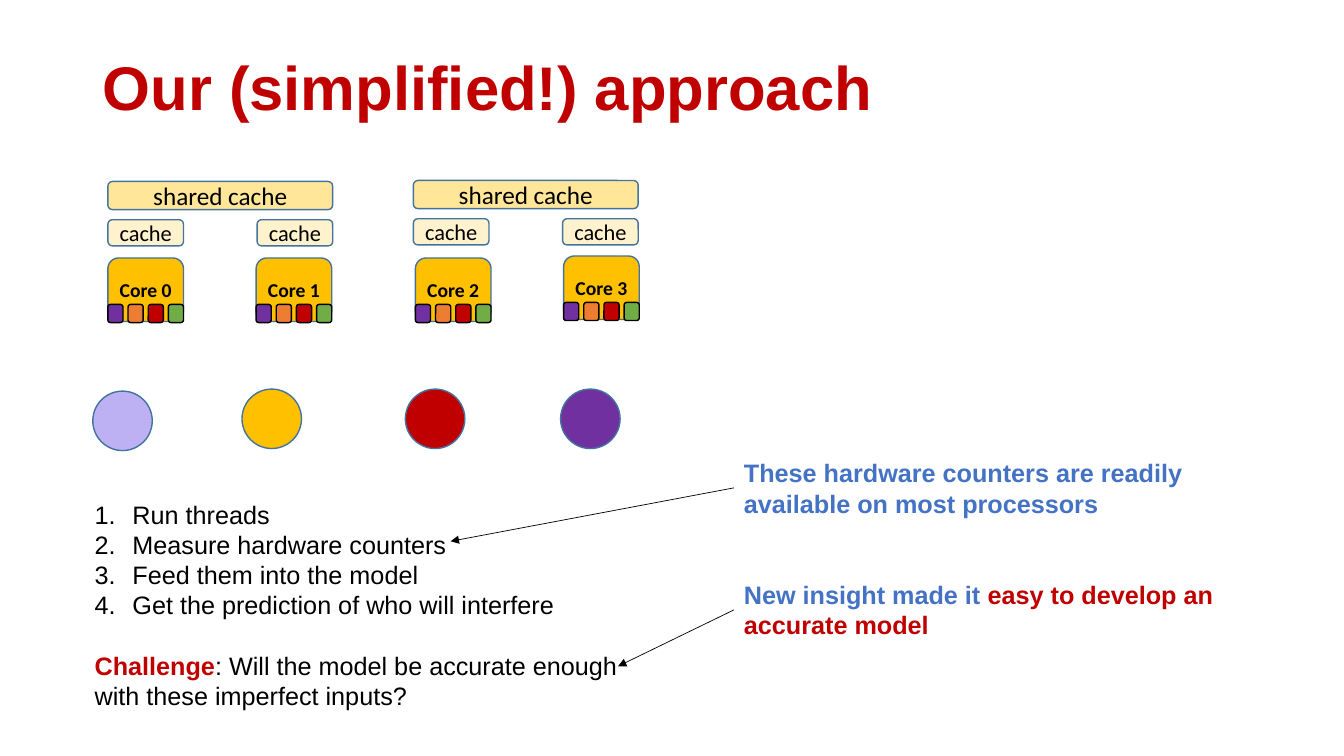
from dataclasses import dataclass
from lxml.etree import SubElement
from pptx import Presentation
from pptx.dml.color import RGBColor
from pptx.enum.shapes import MSO_CONNECTOR as Conn, MSO_SHAPE as Shape
from pptx.enum.text import MSO_ANCHOR as Anchor, MSO_AUTO_SIZE as Fit, PP_ALIGN as Align
from pptx.oxml.ns import qn
from pptx.util import Pt

SCALE = 9144


@dataclass(frozen=True)
class Theme:
    black: str = "000000"
    red: str = "C00000"
    blue: str = "4472C4"
    edge: str = "43739E"
    gold: str = "FFC000"
    cache: str = "FFF2CC"
    shared: str = "FFE699"
    purple: str = "7030A0"
    orange: str = "ED7D31"
    green: str = "70AD47"
    lilac: str = "BEB1F3"
    body_font: str = "Arial"
    label_font: str = "Calibri"
    title_size: int = 44
    body_size: int = 18
    cache_size: int = 16
    core_size: int = 14


T = Theme()


def px(*lengths):
    return [n * SCALE for n in lengths]


def add_run(p, text, size, color, bold=False, font=T.body_font):
    r = p.add_run()
    r.text = text
    r.font.name = font
    r.font.size = Pt(size)
    r.font.bold = bold
    r.font.color.rgb = RGBColor.from_string(color)


def add_block(shapes, kind, box, fill, edge=T.edge):
    sp = shapes.add_shape(kind, *px(*box))
    sp.shadow.inherit = False
    sp.fill.solid()
    sp.fill.fore_color.rgb = RGBColor.from_string(fill)
    sp.line.color.rgb = RGBColor.from_string(edge)
    sp.line.width = Pt(1)
    return sp


def add_labelled(shapes, box, fill, text, size, bold=False):
    tf = add_block(shapes, Shape.ROUNDED_RECTANGLE, box, fill).text_frame
    tf.margin_left = tf.margin_right = tf.margin_top = tf.margin_bottom = 0
    tf.vertical_anchor = Anchor.MIDDLE
    p = tf.paragraphs[0]
    p.alignment = Align.CENTER
    add_run(p, text, size, T.black, bold, T.label_font)


def add_text(s, box, runs, size=T.body_size):
    tf = s.shapes.add_textbox(*px(*box)).text_frame
    tf.word_wrap = True
    tf.auto_size = Fit.SHAPE_TO_FIT_TEXT
    for text, color, bold in runs:
        add_run(tf.paragraphs[0], text, size, color, bold)
    return tf


def add_title(s, box, text):
    tf = add_text(s, box, [(text, T.red, True)], T.title_size)
    tf.auto_size = Fit.NONE
    tf.vertical_anchor = Anchor.MIDDLE
    tf.paragraphs[0].line_spacing = 0.9


def add_core(s, x, y, name):
    add_labelled(s.shapes, (x, y, 75, 63), T.gold, name, T.core_size, True)
    counters = s.shapes.add_group_shape().shapes
    for i, color in enumerate((T.purple, T.orange, T.red, T.green)):
        add_block(counters, Shape.ROUNDED_RECTANGLE,
                  (x + 20 * i, y + 46, 15, 18), color, T.black)


def add_processor(s, x, y, cores):
    add_labelled(s.shapes, (x, y, 223, 28), T.shared, "shared cache", T.body_size)
    for i, (dx, dy, name) in enumerate(cores):
        add_labelled(s.shapes, (x + 148 * i, y + 38, 75, 26), T.cache, "cache", T.cache_size)
        add_core(s, x + dx, y + dy, name)


def add_threads(s, x, y, threads):
    for dx, dy, color in threads:
        add_block(s.shapes, Shape.OVAL, (x + dx, y + dy, 59, 59), color)


def add_steps(s, box, steps):
    tf = add_text(s, box, [])
    for i, step in enumerate(steps):
        p = tf.add_paragraph() if i else tf.paragraphs[0]
        pPr = p._p.get_or_add_pPr()
        pPr.set("marL", "342900")
        pPr.set("indent", "-342900")
        SubElement(pPr, qn("a:buFont"), typeface="+mj-lt")
        SubElement(pPr, qn("a:buAutoNum"), type="arabicPeriod")
        add_run(p, step, T.body_size, T.black)


def add_arrow(s, start, end):
    c = s.shapes.add_connector(Conn.STRAIGHT, *px(*start, *end))
    c.line.color.rgb = RGBColor.from_string(T.black)
    c.line.width = Pt(0.5)
    SubElement(c.line._get_or_add_ln(), qn("a:tailEnd"), type="triangle")
    SubElement(c._element.spPr, qn("a:effectLst"))


def add_remark(s, x, y, runs, target):
    add_text(s, (x, y, 558, 71), runs)
    add_arrow(s, (x, y + 35), target)


def main():
    prs = Presentation()
    prs.slide_width, prs.slide_height = px(1333, 750)
    s = prs.slides.add_slide(prs.slide_layouts[6])
    add_title(s, (92, 17, 1150, 145), "Our (simplified!) approach")
    add_processor(s, 107, 180, [(0, 76, "Core 0"), (147, 76, "Core 1")])
    add_processor(s, 410, 179, [(2, 77, "Core 2"), (149, 75, "Core 3")])
    add_threads(s, 92, 386, [(0, 2, T.lilac), (148, 0, T.gold),
                             (310, 0, T.red), (464, 0, T.purple)])
    add_steps(s, (84, 490, 541, 131), [
        "Run threads",
        "Measure hardware counters",
        "Feed them into the model",
        "Get the prediction of who will interfere",
    ])
    add_text(s, (84, 640, 582, 71), [
        ("Challenge", T.red, True),
        (": Will the model be accurate enough with these imperfect inputs?", T.black, False),
    ])
    add_remark(s, 728, 449, [
        ("These hardware counters are readily available on most processors", T.blue, True),
    ], (447, 537))
    add_remark(s, 728, 570, [
        ("New insight made it ", T.blue, True),
        ("easy to develop an accurate model", T.red, True),
    ], (613, 661))
    prs.save("out.pptx")


if __name__ == "__main__":
    main()
